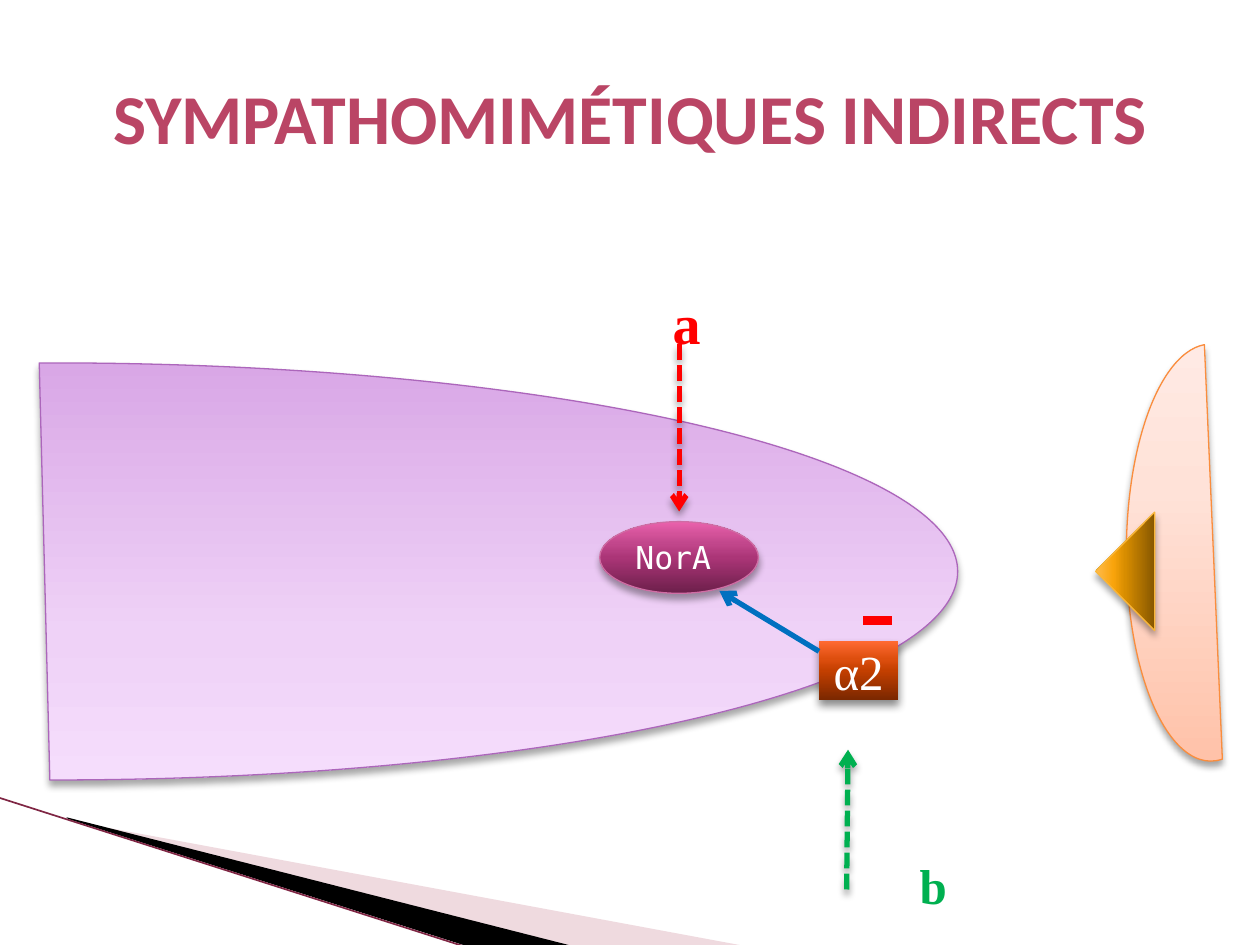
from lxml.etree import SubElement
from pptx import Presentation
from pptx.dml.color import RGBColor
from pptx.enum.dml import MSO_LINE
from pptx.enum.shapes import MSO_CONNECTOR, MSO_SHAPE
from pptx.enum.text import MSO_ANCHOR, PP_ALIGN
from pptx.oxml import parse_xml
from pptx.oxml.ns import nsdecls, qn
from pptx.util import Pt

SERIF = "Times New Roman"
LEFT, CENTER = PP_ALIGN.LEFT, PP_ALIGN.CENTER
TOP, MIDDLE = MSO_ANCHOR.TOP, MSO_ANCHOR.MIDDLE

SWOOSHES = [
    ([(39.6, 468.7), (428.4, 540.7), (328.3, 540.7), (39.6, 468)], "D8A3AF", 40),
    ([(38.2, 467.3), (329, 540.7), (267.8, 541.4), (38.9, 468)], "000000", 100),
]
BODIES = [
    dict(kind=MSO_SHAPE.CHORD, at=(-484.6, 207.4, 1031.8, 238.3), rotation=180,
         adjustments=(51.44, 162.81), line="AC66BB", shadow=(35, 4, 3),
         stops=[(0, "D9A7E6"), (65, "EFD2F7"), (100, "F5DDFC")]),
    dict(kind=MSO_SHAPE.CHORD, at=(643.7, 196.6, 96.5, 238.3),
         adjustments=(52.08, 160.94), line="FA8D3D", shadow=(35, 4, 3),
         stops=[(0, "FFC2A9"), (65, "FFE2D8"), (100, "FFEAE4")]),
    dict(kind=MSO_SHAPE.ISOSCELES_TRIANGLE, at=(609.1, 309.6, 67.7, 33.8), rotation=270,
         line="F9B639", shadow=(35, 4, 3),
         stops=[(0, "865700"), (50, "D88D00"), (70, "F9A40B"), (100, "FFBB4D")]),
    dict(kind=MSO_SHAPE.OVAL, at=(342.7, 298.1, 90.7, 41), line="CF6DA4", shadow=(35, 4, 3),
         stops=[(0, "6C1F4A"), (50, "AB3577"), (70, "C2478C"), (100, "EA61AC")],
         text=("NorA", "DejaVu Sans Mono", 18, "FFFFFF", False, LEFT, TOP)),
    dict(kind=MSO_SHAPE.RECTANGLE, at=(468, 366.5, 45.4, 33.8), shadow=(45, 5, 3),
         stops=[(0, "792700"), (50, "C33F00"), (70, "DD4E0E"), (100, "FF6A32")],
         text=("α2", SERIF, 28, "FFFFFF", False, CENTER, MIDDLE)),
]
ARROWS = [
    ((483.8, 508.3), (484.6, 428.4), "00B050", True),
    ((388.1, 196.6), (388.1, 292.3), "FF0000", True),
    ((468, 372.2), (411.1, 337.7), "0070C0", False),
]
MINUS_AT = (490.3, 343.4, 22.3, 22.3)
TITLE = ((36, 21.6, 648, 90),
         ("SYMPATHOMIMÉTIQUES INDIRECTS", "Calibri", 40, "BA4565", True, CENTER, MIDDLE))
LABELS = [
    ((518.4, 485.3, 22.3, 41), ("b", SERIF, 28, "00B050", True, LEFT, TOP)),
    ((377.3, 161.3, 22.3, 46.1), ("a", SERIF, 32, "FF0000", True, LEFT, TOP)),
]


def color(value):
    return RGBColor.from_string(value)


def points(values):
    return [Pt(value) for value in values]


def add_shadow(effects, opacity, blur, distance):
    shadow = SubElement(effects, qn("a:outerShdw"), blurRad=str(Pt(blur)), dist=str(Pt(distance)),
                        dir="5400000", rotWithShape="0")
    black = SubElement(shadow, qn("a:srgbClr"), val="000000")
    SubElement(black, qn("a:alpha"), val=str(opacity * 1000))


def fill_gradient(shape, stops):
    shape.fill.background()
    gradient = parse_xml(f'<a:gradFill {nsdecls("a")} rotWithShape="1"/>')
    stop_list = SubElement(gradient, qn("a:gsLst"))
    for position, value in stops:
        stop = SubElement(stop_list, qn("a:gs"), pos=str(position * 1000))
        SubElement(stop, qn("a:srgbClr"), val=value)
    SubElement(gradient, qn("a:lin"), ang="16200000", scaled="0")
    properties = shape._element.spPr
    properties.replace(properties.find(qn("a:noFill")), gradient)


def write(shape, text, font, size, value, bold, align, anchor):
    frame = shape.text_frame
    frame.text = text
    frame.word_wrap = True
    frame.vertical_anchor = anchor
    para = frame.paragraphs[0]
    para.alignment = align
    span = para.runs[0].font
    span.name, span.size, span.bold = font, Pt(size), bold
    span.color.rgb = color(value)


def add_text(slide, at, text):
    write(slide.shapes.add_textbox(*points(at)), *text)


def add_line(slide, start, end, value, width):
    line = slide.shapes.add_connector(MSO_CONNECTOR.STRAIGHT, *points(start + end))
    line.line.color.rgb = color(value)
    line.line.width = Pt(width)
    return line, SubElement(line._element.spPr, qn("a:effectLst"))


def add_arrow(slide, start, end, value, dashed):
    arrow, effects = add_line(slide, start, end, value, 3)
    if dashed:
        arrow.line.dash_style = MSO_LINE.SQUARE_DOT
        add_shadow(effects, 35, 4, 3)
    SubElement(arrow.line._get_or_add_ln(), qn("a:tailEnd"), type="arrow")


def add_swoosh(slide, corners, value, opacity):
    builder = slide.shapes.build_freeform(*corners[0], scale=Pt(1))
    builder.add_line_segments(corners[1:], close=True)
    swoosh = builder.convert_to_shape()
    swoosh.shadow.inherit = False
    swoosh.line.fill.background()
    swoosh.fill.solid()
    swoosh.fill.fore_color.rgb = color(value)
    if opacity < 100:
        tint = swoosh._element.spPr.find(qn("a:solidFill"))[0]
        SubElement(tint, qn("a:alpha"), val=str(opacity * 1000))


def add_body(slide, kind, at, stops, shadow, rotation=0, adjustments=(), line=None, text=None):
    body = slide.shapes.add_shape(kind, *points(at))
    body.rotation = rotation
    for index, value in enumerate(adjustments):
        body.adjustments[index] = value
    fill_gradient(body, stops)
    if line:
        body.line.color.rgb = color(line)
        body.line.width = Pt(0.75)
    else:
        body.line.fill.background()
    body.shadow.inherit = False
    add_shadow(body._element.spPr.find(qn("a:effectLst")), *shadow)
    if text:
        write(body, *text)


def main():
    deck = Presentation()
    deck.slide_width, deck.slide_height = Pt(720), Pt(540)
    slide = deck.slides.add_slide(deck.slide_layouts[6])
    for swoosh in SWOOSHES:
        add_swoosh(slide, *swoosh)
    add_line(slide, (-0.7, 455.8), (267.1, 541.4), "7F2644", 0.95)
    add_text(slide, *TITLE)
    for body in BODIES:
        add_body(slide, **body)
    for arrow in ARROWS:
        add_arrow(slide, *arrow)
    minus = slide.shapes.add_shape(MSO_SHAPE.MATH_MINUS, *points(MINUS_AT))
    minus.shadow.inherit = False
    minus.fill.solid()
    minus.fill.fore_color.rgb = color("FF0000")
    minus.line.fill.background()
    for label in LABELS:
        add_text(slide, *label)
    deck.save("out.pptx")


if __name__ == "__main__":
    main()
